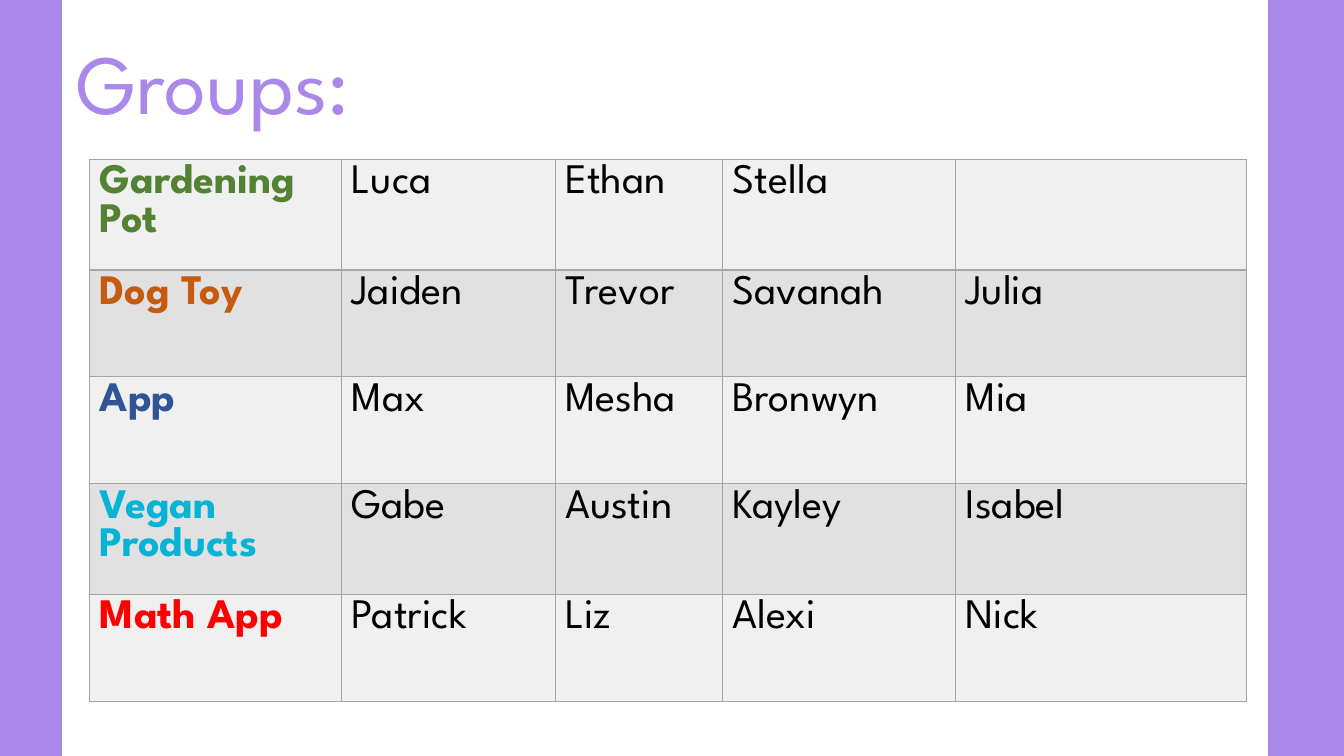
"""Build the slide that lists the project groups."""
from lxml import etree
from pptx import Presentation
from pptx.dml.color import RGBColor
from pptx.enum.shapes import MSO_SHAPE
from pptx.enum.text import MSO_ANCHOR
from pptx.oxml.ns import qn
from pptx.util import Cm, Pt

RECT = MSO_SHAPE.RECTANGLE
BOTTOM = MSO_ANCHOR.BOTTOM
FONT = "League Spartan"
HUES = {
    "purple": "AA88E9", "black": "000000", "edge": "A5A5A5",
    "light": "F0F0F0", "dark": "E1E1E1", "green": "548235",
    "orange": "C55A11", "blue": "2F5597", "cyan": "08B4D6", "red": "FF0000",
}
TITLE = "Groups:"
GROUPS = [
    ("Gardening Pot", "green", ["Luca", "Ethan", "Stella", ""]),
    ("Dog Toy", "orange", ["Jaiden", "Trevor", "Savanah", "Julia"]),
    ("App", "blue", ["Max", "Mesha", "Bronwyn", "Mia"]),
    ("Vegan Products", "cyan", ["Gabe", "Austin", "Kayley", "Isabel"]),
    ("Math App", "red", ["Patrick", "Liz", "Alexi", "Nick"]),
]
BARS = [(-0.33, -0.66), (31.98, -0.33)]
BAR_SIZE = (1.88, 19.96)
TITLE_BOX = (1.68, -0.46, 20.7, 3.94)
TABLE_AT = (2.26, 4.01)
COLS = [6.35, 5.38, 4.22, 5.87, 7.34]
ROW = 2.69


def color(name):
    return RGBColor.from_string(HUES[name])


def add_run(frame, text, size, hue, bold=False):
    run = frame.paragraphs[0].add_run()
    run.text = text
    font = run.font
    font.name, font.size, font.bold = FONT, Pt(size), bold
    font.color.rgb = color(hue)


def add_bar(slide, left, top):
    bar = slide.shapes.add_shape(RECT, *map(Cm, (left, top, *BAR_SIZE)))
    bar.shadow.inherit = False
    bar.fill.solid()
    bar.fill.fore_color.rgb = color("purple")
    bar.line.color.rgb = color("purple")
    bar.line.width = Pt(1)


def add_title(slide):
    box = slide.shapes.add_textbox(*map(Cm, TITLE_BOX))
    frame = box.text_frame
    frame.word_wrap = True
    frame.vertical_anchor = BOTTOM
    frame.paragraphs[0].line_spacing = 0.9
    add_run(frame, TITLE, 60, "purple")


def style_cell(cell, shade):
    props = cell._tc.get_or_add_tcPr()
    for side in ("lnL", "lnR", "lnT", "lnB"):
        line = etree.SubElement(props, qn(f"a:{side}"), w=str(Pt(1)))
        fill = etree.SubElement(line, qn("a:solidFill"))
        etree.SubElement(fill, qn("a:srgbClr"), val=HUES["edge"])
    cell.fill.solid()
    cell.fill.fore_color.rgb = color(shade)


def add_groups(slide):
    size = (sum(COLS), ROW * len(GROUPS))
    frame = slide.shapes.add_table(
        len(GROUPS), len(COLS), *map(Cm, (*TABLE_AT, *size)))
    table = frame.table
    table.first_row = table.horz_banding = False
    for col, width in zip(table.columns, COLS):
        col.width = Cm(width)
    for i, (group, hue, names) in enumerate(GROUPS):
        table.rows[i].height = Cm(ROW)
        for j, text in enumerate([group, *names]):
            cell = table.cell(i, j)
            style_cell(cell, "dark" if i % 2 else "light")
            if text:
                head = j == 0
                add_run(cell.text_frame, text, 30,
                        hue if head else "black", head)


def main():
    deck = Presentation()
    deck.slide_width, deck.slide_height = Cm(33.87), Cm(19.05)
    slide = deck.slides.add_slide(deck.slide_layouts[6])
    for left, top in BARS:
        add_bar(slide, left, top)
    add_title(slide)
    add_groups(slide)
    deck.save("out.pptx")


if __name__ == "__main__":
    main()
